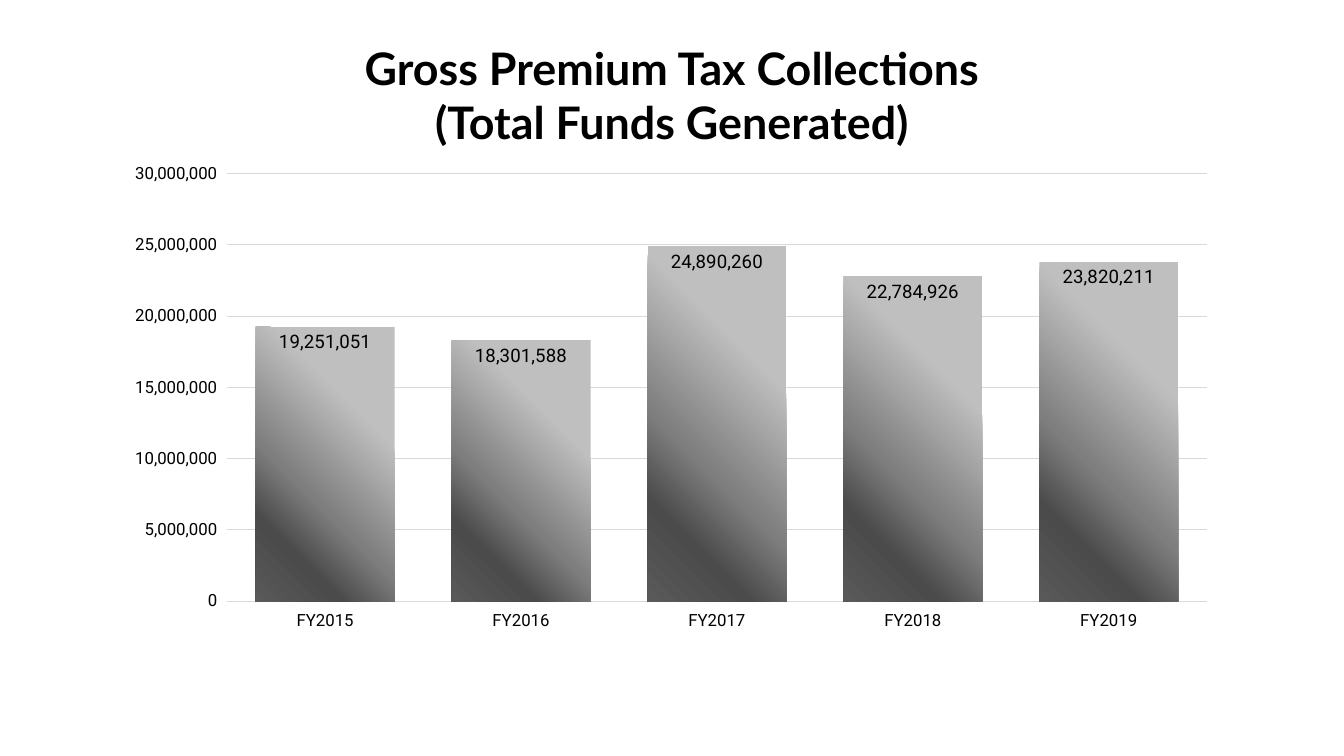
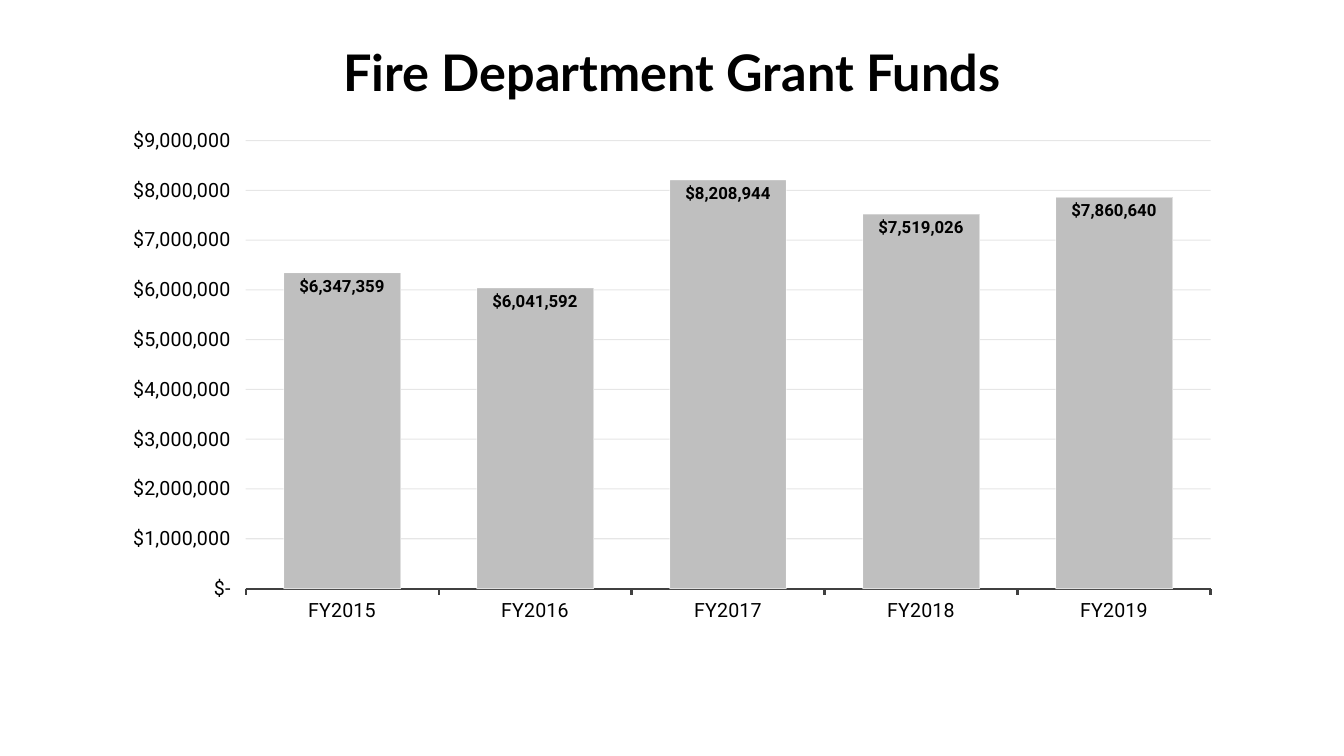
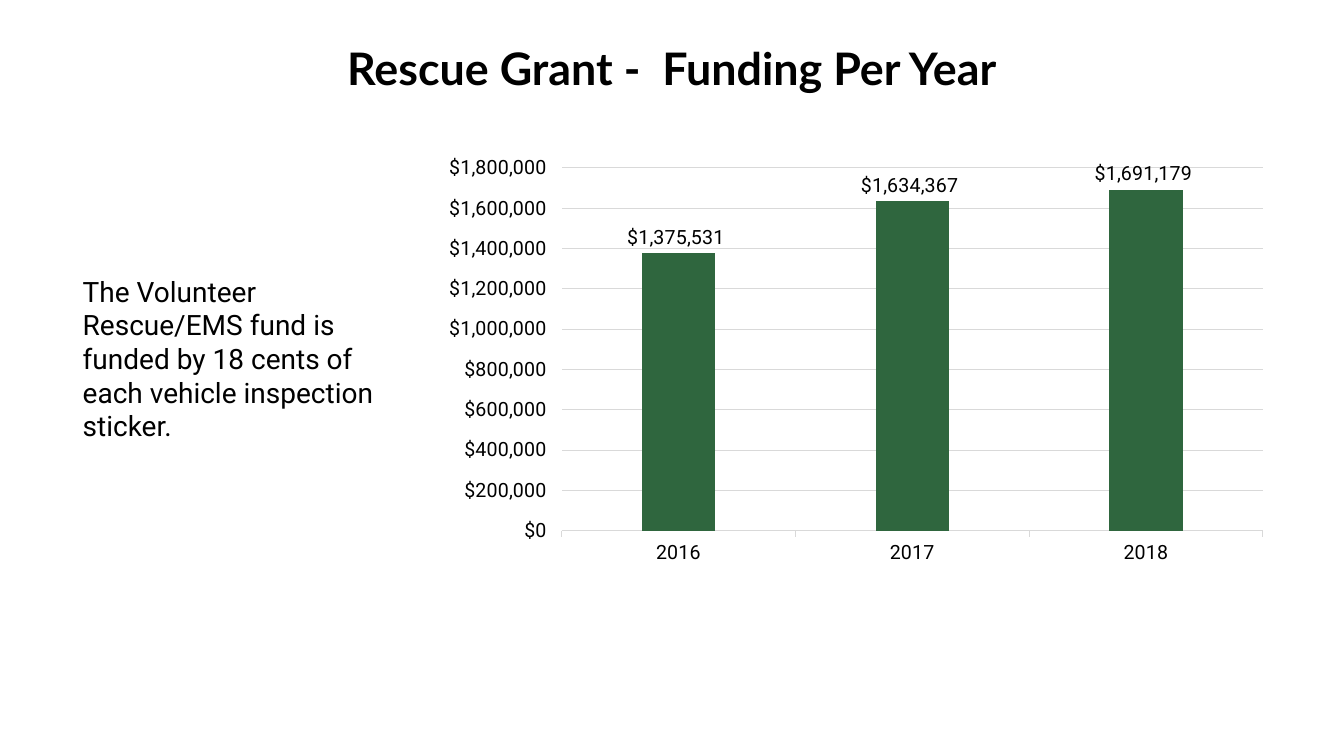
import dataclasses

import lxml.etree
import pptx
import pptx.chart.data
import pptx.dml.color
import pptx.enum.chart
import pptx.enum.text
import pptx.oxml.ns
import pptx.util

Inches = pptx.util.Inches
Pt = pptx.util.Pt
qn = pptx.oxml.ns.qn


@dataclasses.dataclass(frozen=True)
class Theme:
    """Colours, fonts and type sizes shared by the slides."""
    ink: str = "000000"
    silver: str = "BFBFBF"
    green: str = "2F663E"
    white: str = "FFFFFF"
    grid: str = "D9D9D9"
    faint_grid: str = "0D0D0D"
    axis: str = "404040"
    shadow: str = "C0C0C0"
    metal: tuple = ((29, "BFBFBF"), (61, "7E7E7E"), (79, "4B4B4B"), (100, "595959"))
    metal_angle: int = 225
    title_font: str = "Lato"
    body_font: str = "Roboto"
    title_size: float = 32
    big_title_size: float = 36
    body_size: float = 20
    body_leading: float = 24
    axis_size: float = 14
    small_axis_size: float = 12
    label_size: float = 13.3


THEME = Theme()
FISCAL_YEARS = [f"FY{year}" for year in range(2015, 2020)]
PLAIN = "#,##0"
ACCOUNTING = r'_("$"* #,##0_);_("$"* \(#,##0\);_("$"* "-"_);_(@_)'
CURRENCY = r'"$"#,##0_);[Red]\("$"#,##0\)'


def rgb(value):
    """Turn a hex string into a colour."""
    return pptx.dml.color.RGBColor.from_string(value)


def add_element(parent, tag, **attributes):
    """Append a child element with the given attributes."""
    el = lxml.etree.SubElement(parent, qn(tag))
    for name, value in attributes.items():
        el.set(name, str(value))
    return el


def set_font(font, name, size, bold=False):
    """Apply family, size, weight and ink colour to a font."""
    font.name = name
    font.size = Pt(size)
    font.bold = bold
    font.color.rgb = rgb(THEME.ink)


def set_line(line, color, width=0.75, opacity=100):
    """Draw a line, optionally see-through, or hide it when it has no colour."""
    if color is None:
        line.fill.background()
        return
    line.color.rgb = rgb(color)
    line.width = Pt(width)
    if opacity < 100:
        for clr in line._get_or_add_ln().iter(qn("a:srgbClr")):
            add_element(clr, "a:alpha", val=opacity * 1000)


def place(sp, left, top, width, height):
    """Position a shape, with lengths in inches."""
    sp.left, sp.top = Inches(left), Inches(top)
    sp.width, sp.height = Inches(width), Inches(height)


def add_text_shadow(r):
    """Give a run a soft offset shadow."""
    effects = lxml.etree.Element(qn("a:effectLst"))
    shadow = add_element(effects, "a:outerShdw", blurRad=38100, dist=38100,
                         dir=2700000, algn="tl")
    add_element(shadow, "a:srgbClr", val=THEME.shadow)
    r.font._element.find(qn("a:solidFill")).addnext(effects)


def add_title(slide, lines, height, size=THEME.title_size):
    """Fill the title placeholder with centred, shadowed lines."""
    sp = slide.shapes.title
    place(sp, 0, 0.35, 13.33, height)
    tf = sp.text_frame
    tf.word_wrap = True
    tf.auto_size = pptx.enum.text.MSO_AUTO_SIZE.NONE
    p = tf.paragraphs[0]
    p.alignment = pptx.enum.text.PP_ALIGN.CENTER
    for i, line in enumerate(lines):
        if i:
            p.add_line_break()
        r = p.add_run()
        r.text = line
        set_font(r.font, THEME.title_font, size, bold=True)
        add_text_shadow(r)


def add_body(slide, text, box):
    """Fill the body placeholder with one unbulleted paragraph."""
    sp = slide.placeholders[1]
    place(sp, *box)
    tf = sp.text_frame
    tf.word_wrap = True
    tf.auto_size = pptx.enum.text.MSO_AUTO_SIZE.NONE
    p = tf.paragraphs[0]
    pPr = p._p.get_or_add_pPr()
    pPr.set("marL", "0")
    pPr.set("indent", "0")
    add_element(pPr, "a:buNone")
    p.space_before = Pt(0)
    p.line_spacing = Pt(THEME.body_leading)
    r = p.add_run()
    r.text = text
    set_font(r.font, THEME.body_font, THEME.body_size)


def set_plot_layout(chart, bounds):
    """Fix the inner plot area as fractions of the chart."""
    area = chart._chartSpace.find(".//" + qn("c:plotArea"))
    for old in area.findall(qn("c:layout")):
        area.remove(old)
    layout = lxml.etree.Element(qn("c:layout"))
    manual = add_element(layout, "c:manualLayout")
    add_element(manual, "c:layoutTarget", val="inner")
    add_element(manual, "c:xMode", val="edge")
    add_element(manual, "c:yMode", val="edge")
    for tag, value in zip("xywh", bounds):
        add_element(manual, f"c:{tag}", val=value)
    area.insert(0, layout)


def fill_metal(series):
    """Fill bars with the diagonal metallic gradient."""
    fill = series.format.fill
    fill.gradient()
    fill.gradient_angle = THEME.metal_angle
    stops = series._element.find(".//" + qn("a:gsLst"))
    for old in list(stops):
        stops.remove(old)
    for position, color in THEME.metal:
        gs = add_element(stops, "a:gs", pos=position * 1000)
        add_element(gs, "a:srgbClr", val=color)


def format_axes(chart, size, top, step, number_format):
    """Set the type, ticks and scale of both axes."""
    for axis in (chart.category_axis, chart.value_axis):
        set_font(axis.tick_labels.font, THEME.body_font, size)
        axis.major_tick_mark = pptx.enum.chart.XL_TICK_MARK.OUTSIDE
        axis.minor_tick_mark = pptx.enum.chart.XL_TICK_MARK.NONE
    axis = chart.value_axis
    axis.minimum_scale, axis.maximum_scale, axis.major_unit = 0, top, step
    axis.tick_labels.number_format = number_format
    axis.tick_labels.number_format_is_linked = False
    axis.has_major_gridlines = True
    set_line(axis.format.line, None)


def add_labels(plot, number_format, size, position, bold=False):
    """Show each bar's value."""
    plot.has_data_labels = True
    labels = plot.data_labels
    labels.show_value = True
    labels.number_format = number_format
    labels.number_format_is_linked = False
    labels.position = position
    set_font(labels.font, THEME.body_font, size, bold)


def add_bar_chart(slide, box, bounds, categories, values, number_format, gap,
                  axis_size, top, step):
    """Add a one-series column chart and return it."""
    data = pptx.chart.data.CategoryChartData(number_format=number_format)
    data.categories = categories
    data.add_series("Series 1", values)
    kind = pptx.enum.chart.XL_CHART_TYPE.COLUMN_CLUSTERED
    chart = slide.shapes.add_chart(kind, *map(Inches, box), data).chart
    chart.has_legend = False
    chart.has_title = False
    set_font(chart.font, THEME.body_font, axis_size)
    set_plot_layout(chart, bounds)
    format_axes(chart, axis_size, top, step, number_format)
    plot = chart.plots[0]
    plot.vary_by_categories = False
    plot.gap_width = gap
    plot.series[0].invert_if_negative = False
    return chart


def build_premium_tax(prs):
    """Build the premium tax slide."""
    slide = prs.slides.add_slide(prs.slide_layouts[5])
    add_title(slide, ["Gross Premium Tax Collections", "(Total Funds Generated)"], 1.18)
    chart = add_bar_chart(
        slide, (1.15, 1.53, 11.04, 4.82), (0.1, 0.04, 0.88, 0.88), FISCAL_YEARS,
        [19251051, 18301588, 24890260, 22784926, 23820211], PLAIN, 41,
        THEME.small_axis_size, 30000000, 5000000)
    set_line(chart.category_axis.format.line, None)
    set_line(chart.value_axis.major_gridlines.format.line, THEME.grid)
    plot = chart.plots[0]
    fill_metal(plot.series[0])
    add_labels(plot, PLAIN, THEME.label_size,
               pptx.enum.chart.XL_LABEL_POSITION.INSIDE_END)


def build_fire_grant(prs):
    """Build the fire department grant slide."""
    slide = prs.slides.add_slide(prs.slide_layouts[5])
    add_title(slide, ["Fire Department Grant Funds"], 0.71, THEME.big_title_size)
    chart = add_bar_chart(
        slide, (1.1, 1.19, 11.13, 5.11), (0.12, 0.04, 0.86, 0.87), FISCAL_YEARS,
        [6347359, 6041592, 8208944, 7519026, 7860640], ACCOUNTING, 65,
        THEME.axis_size, 9000000, 1000000)
    set_line(chart.category_axis.format.line, THEME.axis, 1.5)
    set_line(chart.value_axis.major_gridlines.format.line, THEME.faint_grid, opacity=10)
    plot = chart.plots[0]
    bars = plot.series[0].format
    bars.fill.solid()
    bars.fill.fore_color.rgb = rgb(THEME.silver)
    set_line(bars.line, THEME.white, opacity=50)
    add_labels(plot, ACCOUNTING, THEME.small_axis_size,
               pptx.enum.chart.XL_LABEL_POSITION.INSIDE_END, bold=True)


def build_rescue_grant(prs):
    """Build the rescue grant slide."""
    slide = prs.slides.add_slide(prs.slide_layouts[1])
    add_title(slide, ["Rescue Grant -  Funding Per Year"], 0.64)
    add_body(slide, "The Volunteer Rescue/EMS fund is funded by 18 cents of each "
             "vehicle inspection sticker.", (0.72, 2.67, 3.38, 1.08))
    chart = add_bar_chart(
        slide, (4.23, 1.21, 8.38, 5.07), (0.16, 0.09, 0.83, 0.71),
        ["2016", "2017", "2018"], [1375531, 1634367, 1691179], CURRENCY, 219,
        THEME.axis_size, 1800000, 200000)
    set_line(chart.category_axis.format.line, THEME.grid)
    set_line(chart.value_axis.major_gridlines.format.line, THEME.grid)
    plot = chart.plots[0]
    plot.overlap = -27
    bars = plot.series[0].format
    bars.fill.solid()
    bars.fill.fore_color.rgb = rgb(THEME.green)
    add_labels(plot, CURRENCY, THEME.axis_size,
               pptx.enum.chart.XL_LABEL_POSITION.OUTSIDE_END)


def main():
    """Build and save the presentation."""
    prs = pptx.Presentation()
    prs.slide_width, prs.slide_height = Inches(13.33), Inches(7.5)
    build_premium_tax(prs)
    build_fire_grant(prs)
    build_rescue_grant(prs)
    prs.save("out.pptx")


if __name__ == "__main__":
    main()
